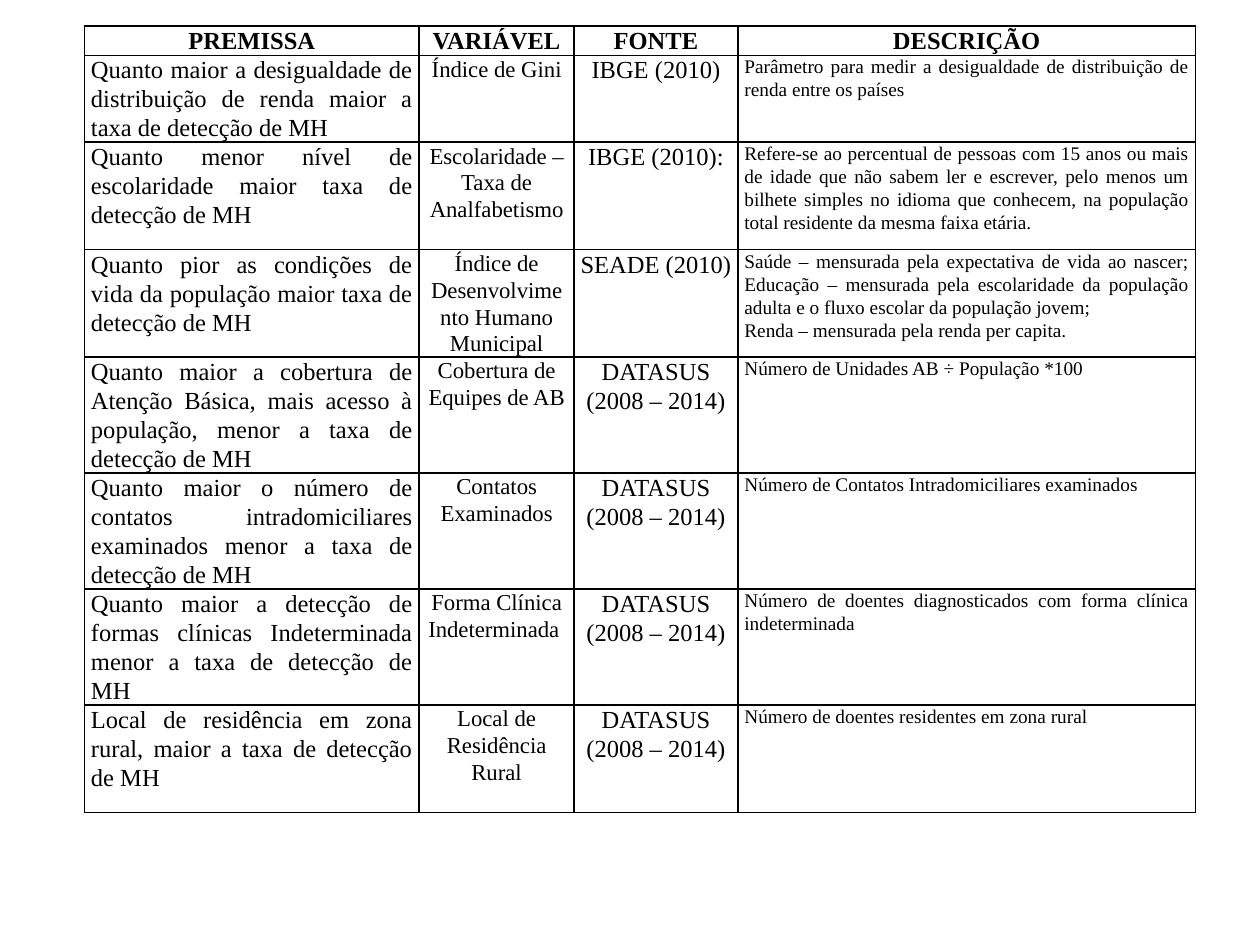
from lxml import etree
from pptx import Presentation
from pptx import util as u
from pptx.dml import color
from pptx.enum import text
from pptx.oxml import ns

Pt = u.Pt
HUES = {"ink": "000000", "paper": "FFFFFF"}
MID = text.PP_ALIGN.CENTER
JUST = text.PP_ALIGN.JUSTIFY

HEADS = ["PREMISSA", "VARIÁVEL", "FONTE", "DESCRIÇÃO"]
HEALTH = "DATASUS\n(2008 – 2014)"
ROWS = [
    ["Quanto maior a desigualdade de distribuição de renda maior a taxa de detecção de MH",
     "Índice de Gini", "IBGE (2010)",
     "Parâmetro para medir a desigualdade de distribuição de renda entre os países"],
    ["Quanto menor nível de escolaridade maior taxa de detecção de MH",
     "Escolaridade – Taxa de Analfabetismo", "IBGE (2010):",
     "Refere-se ao percentual de pessoas com 15 anos ou mais de idade que não sabem ler e "
     "escrever, pelo menos um bilhete simples no idioma que conhecem, na população total "
     "residente da mesma faixa etária."],
    ["Quanto pior as condições de vida da população maior taxa de detecção de MH",
     "Índice de Desenvolvimento Humano Municipal", "SEADE (2010)",
     "Saúde – mensurada pela expectativa de vida ao nascer; Educação – mensurada pela "
     "escolaridade da população adulta e o fluxo escolar da população jovem;\n"
     "Renda – mensurada pela renda per capita."],
    ["Quanto maior a cobertura de Atenção Básica, mais acesso à população, menor a taxa de "
     "detecção de MH",
     "Cobertura de Equipes de AB", HEALTH, "Número de Unidades AB ÷ População *100"],
    ["Quanto maior o número de contatos intradomiciliares examinados menor a taxa de "
     "detecção de MH",
     "Contatos Examinados", HEALTH, "Número de Contatos Intradomiciliares examinados"],
    ["Quanto maior a detecção de formas clínicas Indeterminada menor a taxa de detecção de MH",
     "Forma Clínica Indeterminada ", HEALTH,
     "Número de doentes diagnosticados com forma clínica indeterminada"],
    ["Local de residência em zona rural, maior a taxa de detecção de MH",
     "Local de Residência Rural", HEALTH, "Número de doentes residentes em zona rural"],
]
WIDTHS = [191.2, 88.5, 93.7, 261.4]
HEIGHTS = [16, 46] + [61.4] * 6
SIZES = [14, 13, 14, 11]
ALIGNS = [JUST, MID, MID, JUST]


class Deck:
    def __init__(self, wide, high):
        self.font = "Times New Roman"
        self.lead = 1.07
        self.pad = 3.7
        self.prs = Presentation()
        self.prs.slide_width, self.prs.slide_height = Pt(wide), Pt(high)
        self.slide = self.prs.slides.add_slide(self.prs.slide_layouts[6])
        fill = self.slide.background.fill
        fill.solid()
        fill.fore_color.rgb = color.RGBColor.from_string(HUES["paper"])

    def border(self, cell):
        props = cell._tc.get_or_add_tcPr()
        for spot, side in enumerate(("lnL", "lnR", "lnT", "lnB")):
            line = etree.Element(ns.qn("a:" + side), w=str(Pt(1)))
            fill = etree.SubElement(line, ns.qn("a:solidFill"))
            etree.SubElement(fill, ns.qn("a:srgbClr"), val=HUES["ink"])
            props.insert(spot, line)

    def cell(self, cell, words, size, align, bold):
        cell.fill.background()
        self.border(cell)
        cell.margin_left = cell.margin_right = Pt(self.pad)
        cell.margin_top = cell.margin_bottom = 0
        cell.text_frame.text = words
        for para in cell.text_frame.paragraphs:
            para.alignment = align
            para.line_spacing = self.lead
            for run in para.runs:
                run.font.name = self.font
                run.font.size = Pt(size)
                run.font.bold = bold
                run.font.color.rgb = color.RGBColor.from_string(HUES["ink"])

    def table(self, left, top, heads, rows):
        frame = self.slide.shapes.add_table(
            len(rows) + 1, len(heads), Pt(left), Pt(top), Pt(sum(WIDTHS)), Pt(sum(HEIGHTS)))
        grid = frame.table
        grid.first_row = grid.horz_banding = False
        for col, width in zip(grid.columns, WIDTHS):
            col.width = Pt(width)
        for row, height in zip(grid.rows, HEIGHTS):
            row.height = Pt(height)
        for c, head in enumerate(heads):
            self.cell(grid.cell(0, c), head, 14, MID, True)
        for r, row in enumerate(rows, 1):
            for c, words in enumerate(row):
                self.cell(grid.cell(r, c), words, SIZES[c], ALIGNS[c], False)


def main():
    deck = Deck(720, 540)
    deck.table(48.3, 15, HEADS, ROWS)
    deck.prs.save("out.pptx")


if __name__ == "__main__":
    main()
